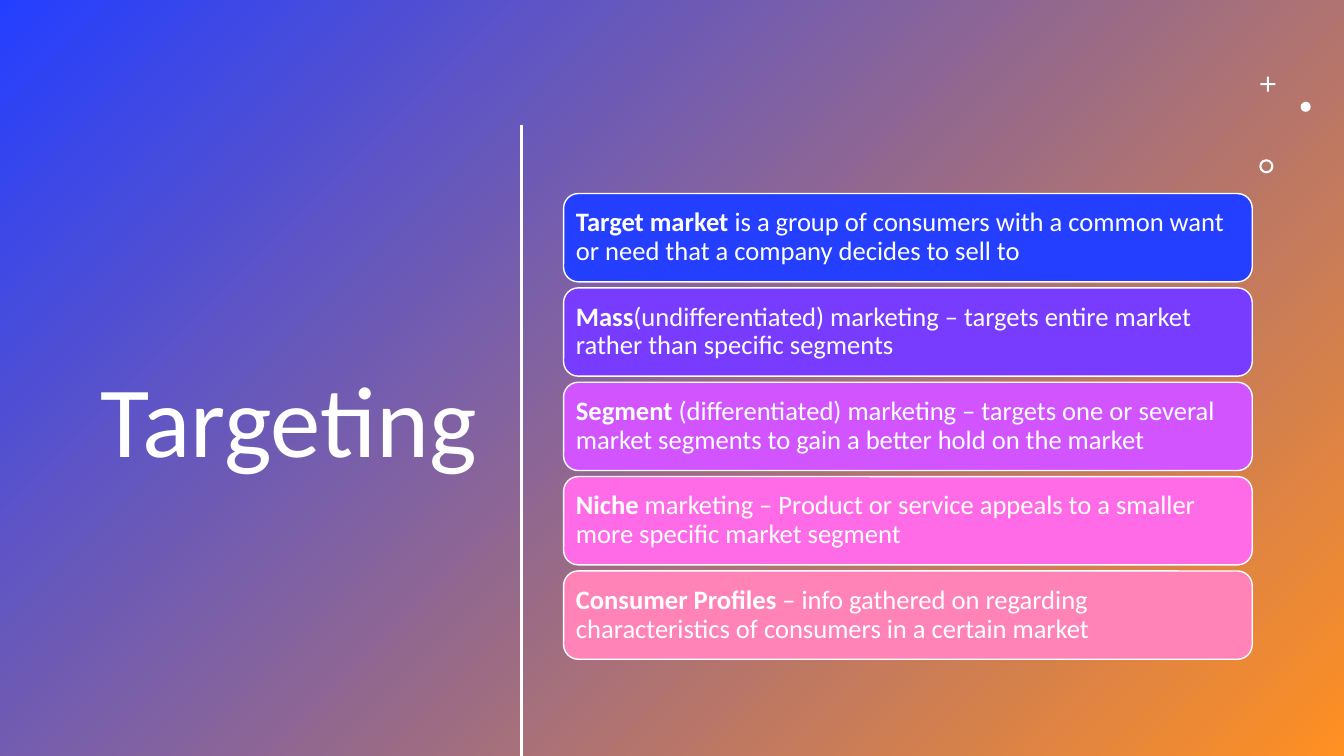
from lxml import etree
from pptx import Presentation
from pptx.dml.color import RGBColor
from pptx.enum.shapes import MSO_CONNECTOR, MSO_SHAPE
from pptx.enum.text import MSO_ANCHOR, PP_ALIGN
from pptx.oxml.ns import qn
from pptx.util import Inches, Pt

RECTANGLE = MSO_SHAPE.RECTANGLE
ROUNDED = MSO_SHAPE.ROUNDED_RECTANGLE
CROSS = MSO_SHAPE.CROSS
OVAL = MSO_SHAPE.OVAL
DONUT = MSO_SHAPE.DONUT
STRAIGHT = MSO_CONNECTOR.STRAIGHT
MIDDLE = MSO_ANCHOR.MIDDLE
LEFT, RIGHT = PP_ALIGN.LEFT, PP_ALIGN.RIGHT

FONT = "Calibri"
WHITE, BLUE, ORANGE = "FFFFFF", "243FFF", "FF9022"
WIDTH, HEIGHT = 13.33, 7.5

CARDS = [
    (BLUE, "Target market ",
     "is a group of consumers with a common want or need that a company decides to sell to"),
    ("773CFF", "Mass",
     "(undifferentiated) marketing – targets entire market rather than specific segments"),
    ("D154FF", "Segment",
     " (differentiated) marketing – targets one or several market segments to gain a better hold on the market"),
    ("FF6BE7", "Niche",
     " marketing – Product or service appeals to a smaller more specific market segment"),
    ("FF83B6", "Consumer Profiles ",
     "– info gathered on regarding characteristics of consumers in a certain market"),
]


def color(value):
    return RGBColor.from_string(value)


def add_text(para, text, size, bold=False, fill=WHITE):
    span = para.add_run()
    span.text = text
    span.font.name = FONT
    span.font.size = Pt(size)
    span.font.bold = bold
    span.font.color.rgb = color(fill)


def first_para(shape, align, inset):
    frame = shape.text_frame
    frame.word_wrap = True
    frame.vertical_anchor = MIDDLE
    frame.margin_left = frame.margin_right = Inches(inset)
    frame.margin_top = frame.margin_bottom = Inches(inset)
    para = frame.paragraphs[0]
    para.alignment = align
    para.line_spacing = 0.9
    return para


def add_box(page, kind, box, fill=None, line=None):
    shape = page.shapes.add_shape(kind, *map(Inches, box))
    shape.shadow.inherit = False
    if fill:
        shape.fill.solid()
        shape.fill.fore_color.rgb = color(fill)
    if line:
        shape.line.color.rgb = color(line)
        shape.line.width = Pt(1)
    else:
        shape.line.fill.background()
    return shape


def draw_backdrop(page, box):
    fill = add_box(page, RECTANGLE, box).fill
    fill.gradient()
    fill.gradient_angle = 315
    for stop, value in zip(fill.gradient_stops, (BLUE, ORANGE)):
        stop.color.rgb = color(value)


def draw_title(page, box):
    title = page.shapes.add_textbox(*map(Inches, box))
    add_text(first_para(title, RIGHT, 0.1), "Targeting", 72)


def draw_divider(page, x, top, bottom):
    divider = page.shapes.add_connector(
        STRAIGHT, Inches(x), Inches(top), Inches(x), Inches(bottom))
    divider.line.color.rgb = color(WHITE)
    divider.line.width = Pt(2)
    etree.SubElement(divider._element.spPr, qn("a:effectLst"))


def draw_ornaments(page, left, top):
    plus = add_box(page, CROSS, (left + 0.01, top, 0.15, 0.15), WHITE)
    plus.adjustments[0] = 0.44
    add_box(page, OVAL, (left + 0.41, top + 0.25, 0.1, 0.1), WHITE)
    ring = add_box(page, DONUT, (left, top + 0.82, 0.14, 0.14), WHITE)
    ring.adjustments[0] = 0.15


def draw_cards(page, box, gap):
    left, top, width, height = box
    card_height = (height + gap) / len(CARDS) - gap
    for index, (fill, term, meaning) in enumerate(CARDS):
        y = top + index * (card_height + gap)
        card = add_box(page, ROUNDED, (left, y, width, card_height), fill, WHITE)
        para = first_para(card, LEFT, 0.08)
        add_text(para, term, 19, bold=True)
        add_text(para, meaning, 19)


def main():
    deck = Presentation()
    deck.slide_width, deck.slide_height = Inches(WIDTH), Inches(HEIGHT)
    page = deck.slides.add_slide(deck.slide_layouts[6])
    draw_backdrop(page, (0, 0, WIDTH, HEIGHT))
    draw_title(page, (0.52, 1.16, 4.31, 6.11))
    draw_ornaments(page, 12.49, 0.76)
    draw_divider(page, 5.17, 1.24, HEIGHT)
    draw_cards(page, (5.59, 1.92, 6.83, 4.62), 0.06)
    deck.save("out.pptx")


if __name__ == "__main__":
    main()
